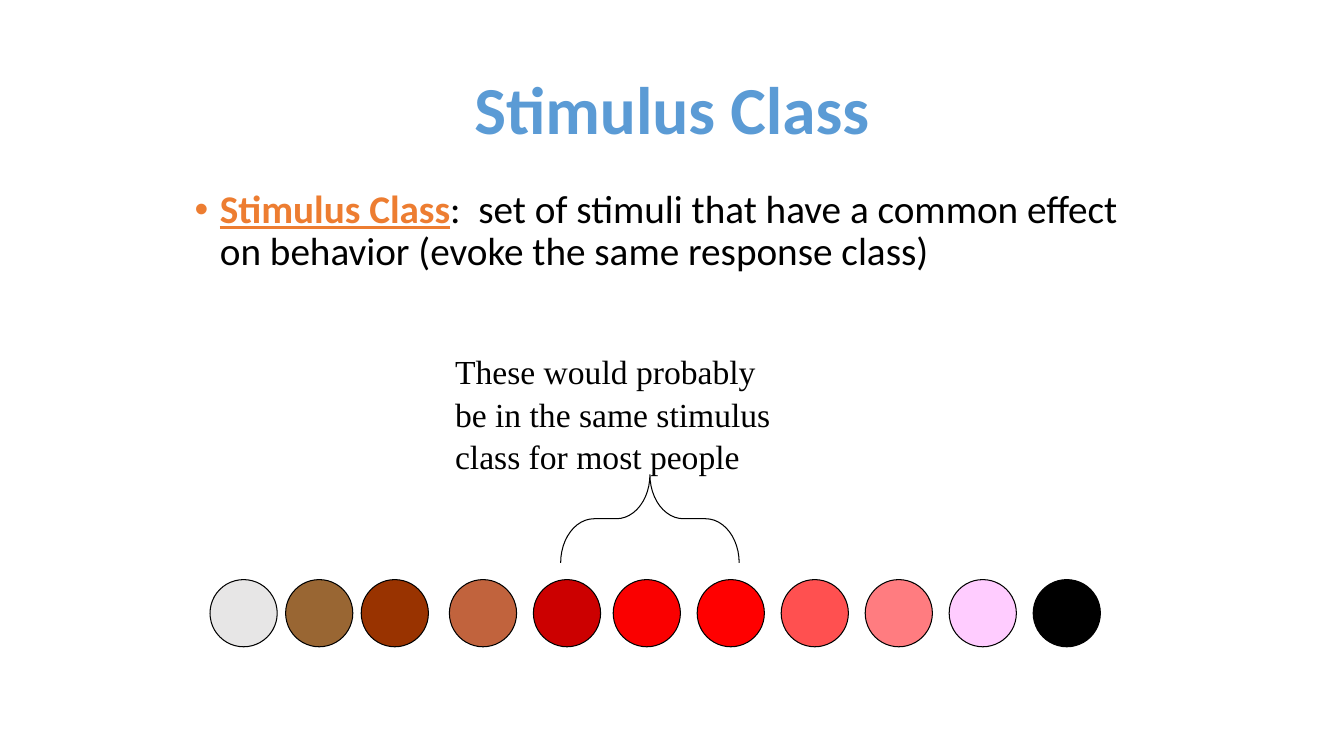
from dataclasses import dataclass

from pptx import Presentation, oxml, util as u
from pptx.dml.color import RGBColor
from pptx.enum import shapes, text
from pptx.oxml import ns

PX = u.Inches(1) // 96


@dataclass(frozen=True)
class Theme:
    """Colours, fonts and type sizes of the deck."""
    heading: str = "5B9BD5"
    term: str = "ED7D31"
    ink: str = "000000"
    sans: str = "Calibri"
    serif: str = "Times New Roman"
    title_size: int = 48
    body_size: int = 28
    caption_size: int = 24
    outline: float = 0.75


THEME = Theme()
STIMULI = (
    (0, "E7E6E6"), (72, "996633"), (144, "993300"), (228, "C1633D"),
    (308, "CC0000"), (384, "FA0000"), (464, "FF0000"), (544, "FF5050"),
    (624, "FF7C80"), (704, "FFCCFF"), (784, "000000"),
)


def apply(target, **values):
    """Set each named attribute on the target."""
    for name, value in values.items():
        setattr(target, name, value)


def emu(box):
    """Turn a box in px into EMU."""
    return [side * PX for side in box]


def add_span(para, words, font, size, color, **values):
    """Add a run of text with its format."""
    span = para.add_run()
    span.text = words
    apply(span.font, name=font, size=u.Pt(size), **values)
    span.font.color.rgb = RGBColor.from_string(color)


def add_text_box(page, box):
    """Add a wrapping text box and return its first paragraph."""
    frame = page.shapes.add_textbox(*emu(box)).text_frame
    apply(frame, word_wrap=True, auto_size=text.MSO_AUTO_SIZE.NONE)
    return frame.paragraphs[0]


def add_outlined(page, kind, box, fill=None):
    """Add a thinly outlined shape, filled when a colour is given."""
    shape = page.shapes.add_shape(kind, *emu(box))
    shape.shadow.inherit = False
    if fill:
        shape.fill.solid()
        shape.fill.fore_color.rgb = RGBColor.from_string(fill)
    else:
        shape.fill.background()
    shape.line.width = u.Pt(THEME.outline)
    shape.line.color.rgb = RGBColor.from_string(THEME.ink)
    return shape


def place_title(page, box):
    """Move the title placeholder and fill it."""
    title = page.shapes.title
    apply(title, **dict(zip(("left", "top", "width", "height"), emu(box))))
    apply(title.text_frame, vertical_anchor=text.MSO_ANCHOR.MIDDLE,
          auto_size=text.MSO_AUTO_SIZE.NONE)
    para = title.text_frame.paragraphs[0]
    apply(para, alignment=text.PP_ALIGN.CENTER, line_spacing=0.9)
    add_span(para, "Stimulus Class", THEME.sans, THEME.title_size, THEME.heading, bold=True)


def place_definition(page, box):
    """Write the bulleted definition of the term."""
    para = add_text_box(page, box)
    apply(para, line_spacing=0.9, space_before=u.Pt(10))
    props = para._p.get_or_add_pPr()
    props.set("marL", str(24 * PX))
    props.set("indent", str(-24 * PX))
    props.append(oxml.parse_xml(f'<a:buFont {ns.nsdecls("a")} typeface="Arial"/>'))
    props.append(oxml.parse_xml(f'<a:buChar {ns.nsdecls("a")} char="•"/>'))
    add_span(para, "Stimulus Class", THEME.sans, THEME.body_size, THEME.term,
             bold=True, underline=True)
    add_span(para, ":  set of stimuli that have a common effect on behavior "
             "(evoke the same response class)", THEME.sans, THEME.body_size, THEME.ink)


def place_caption(page, box):
    """Write the caption and hang a brace below its text."""
    left, top, width, height = box
    para = add_text_box(page, box)
    para.line_spacing = 1.05
    add_span(para, "These would probably be in the same stimulus class for most people",
             THEME.serif, THEME.caption_size, THEME.ink)
    brace = add_outlined(page, shapes.MSO_SHAPE.RIGHT_BRACE,
                         (left + 153, top + 81, 84, 170))
    brace.rotation = 270
    brace.adjustments[0] = 0.38


def place_stimuli(page, box):
    """Draw the row of coloured circles."""
    left, top, width, height = box
    for offset, color in STIMULI:
        add_outlined(page, shapes.MSO_SHAPE.OVAL,
                     (left + offset, top, height, height), color)


def build_stimulus_slide(deck):
    """Add the slide that explains a stimulus class."""
    page = deck.slides.add_slide(deck.slide_layouts.get_by_name("Title Only"))
    place_title(page, (88, 38, 1104, 139))
    place_definition(page, (176, 176, 928, 520))
    place_stimuli(page, (200, 552, 848, 64))
    place_caption(page, (424, 328, 336, 126))


def main():
    """Build and save the deck."""
    deck = Presentation()
    apply(deck, slide_width=1280 * PX, slide_height=720 * PX)
    build_stimulus_slide(deck)
    deck.save("out.pptx")


if __name__ == "__main__":
    main()
